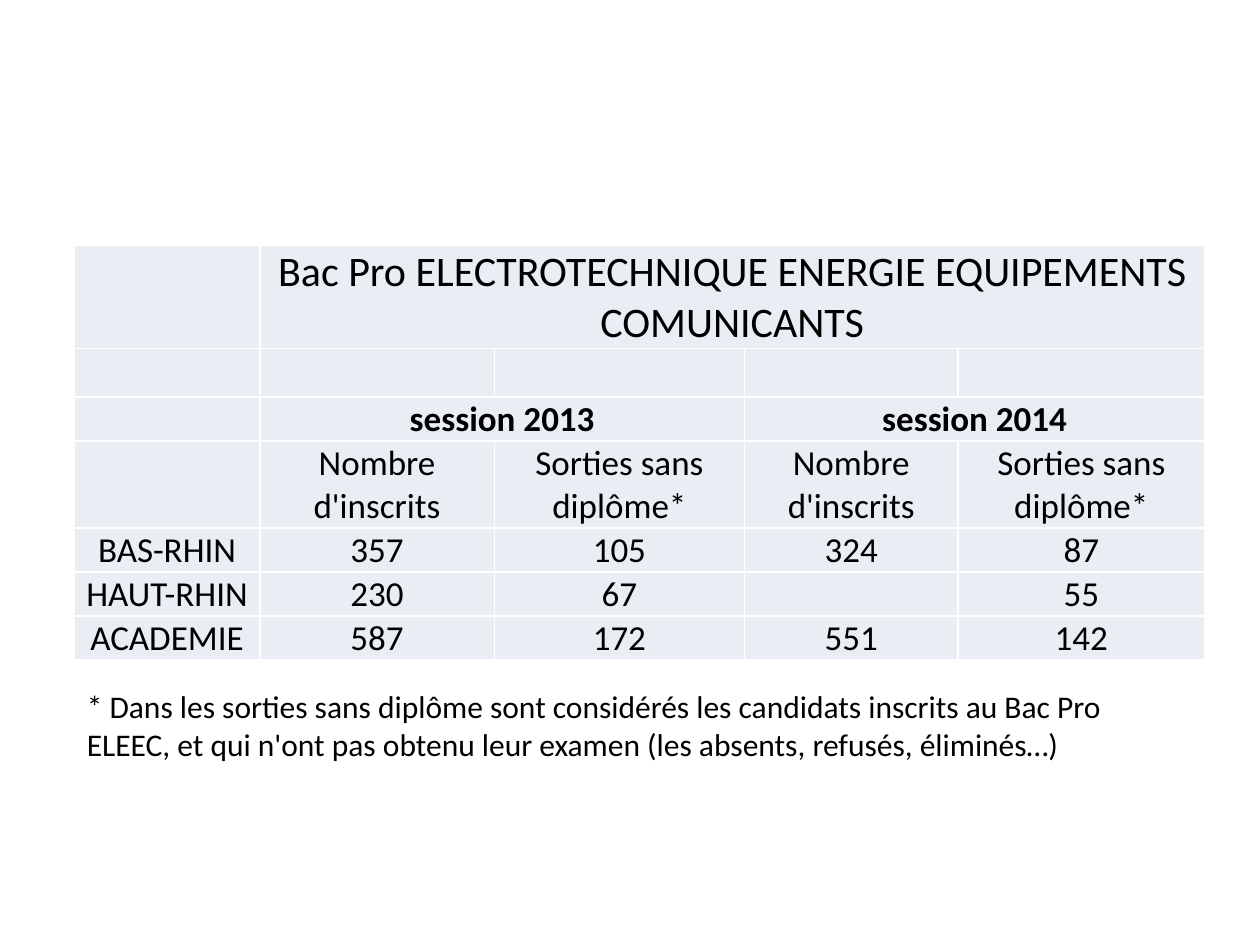
from lxml import etree
from pptx import Presentation
from pptx.dml.color import RGBColor
from pptx.enum import text
from pptx.oxml import ns
from pptx.util import Pt

BLACK = RGBColor(0, 0, 0)
WHITE = RGBColor(255, 255, 255)
PALE = RGBColor(0xE9, 0xED, 0xF4)
FONT = "Calibri"

TITLE = "Bac Pro ELECTROTECHNIQUE ENERGIE EQUIPEMENTS COMUNICANTS"
HEADS = ["Nombre d'inscrits", "Sorties sans diplôme*"]
ROWS = [
    ["", TITLE, "", "", ""],
    [""] * 5,
    ["", "session 2013", "", "session 2014", ""],
    [""] + HEADS * 2,
    ["BAS-RHIN", "357", "105", "324", "87"],
    ["HAUT-RHIN", "230", "67", "", "55"],
    ["ACADEMIE", "587", "172", "551", "142"],
]
SPANS = [(0, 1, 4), (2, 1, 2), (2, 3, 4)]  # row, first column, last column
WIDTHS = [106, 134, 143, 122, 141]
LINE = 25.1
HEIGHTS = [59, 27.5, LINE, 49.7, LINE, LINE, LINE]
NOTE = ("* Dans les sorties sans diplôme sont considérés les candidats inscrits "
        "au Bac Pro ELEEC, et qui n'ont pas obtenu leur examen "
        "(les absents, refusés, éliminés…)")
LEFT, TOP = 42.5, 140


def write(par, words, size, bold=False):
    run = par.add_run()
    run.text = words
    font = run.font
    font.name, font.size, font.bold = FONT, Pt(size), bold
    font.color.rgb = BLACK


def frame(cell):
    """Give the cell a thin white border on all four sides."""
    props = cell._tc.get_or_add_tcPr()
    for side in ("a:lnL", "a:lnR", "a:lnT", "a:lnB"):
        line = etree.SubElement(props, ns.qn(side), w=str(Pt(1)))
        fill = etree.SubElement(line, ns.qn("a:solidFill"))
        etree.SubElement(fill, ns.qn("a:srgbClr"), val=str(WHITE))


def style(cell):
    frame(cell)
    cell.fill.solid()
    cell.fill.fore_color.rgb = PALE
    cell.vertical_anchor = text.MSO_ANCHOR.BOTTOM
    cell.margin_left = cell.margin_right = cell.margin_top = Pt(0.7)
    cell.margin_bottom = 0


def add_grid(slide):
    table = slide.shapes.add_table(
        len(ROWS), len(WIDTHS), Pt(LEFT), Pt(TOP),
        Pt(sum(WIDTHS)), Pt(sum(HEIGHTS))).table
    for col, width in zip(table.columns, WIDTHS):
        col.width = Pt(width)
    for row, height in zip(table.rows, HEIGHTS):
        row.height = Pt(height)
    for r, words in enumerate(ROWS):
        for c, word in enumerate(words):
            cell = table.cell(r, c)
            style(cell)
            if word:
                par = cell.text_frame.paragraphs[0]
                par.alignment = text.PP_ALIGN.CENTER
                write(par, word, 24 if r == 0 else 20, r == 2)
    for r, first, last in SPANS:
        table.cell(r, first).merge(table.cell(r, last))


def add_note(slide):
    box = slide.shapes.add_textbox(Pt(LEFT), Pt(389), Pt(641), Pt(51))
    box.text_frame.word_wrap = True
    box.text_frame.auto_size = text.MSO_AUTO_SIZE.SHAPE_TO_FIT_TEXT
    write(box.text_frame.paragraphs[0], NOTE, 18)


def main():
    deck = Presentation()
    deck.slide_width, deck.slide_height = Pt(720), Pt(540)
    slide = deck.slides.add_slide(deck.slide_layouts[6])
    add_grid(slide)
    add_note(slide)
    deck.save("out.pptx")


if __name__ == "__main__":
    main()
